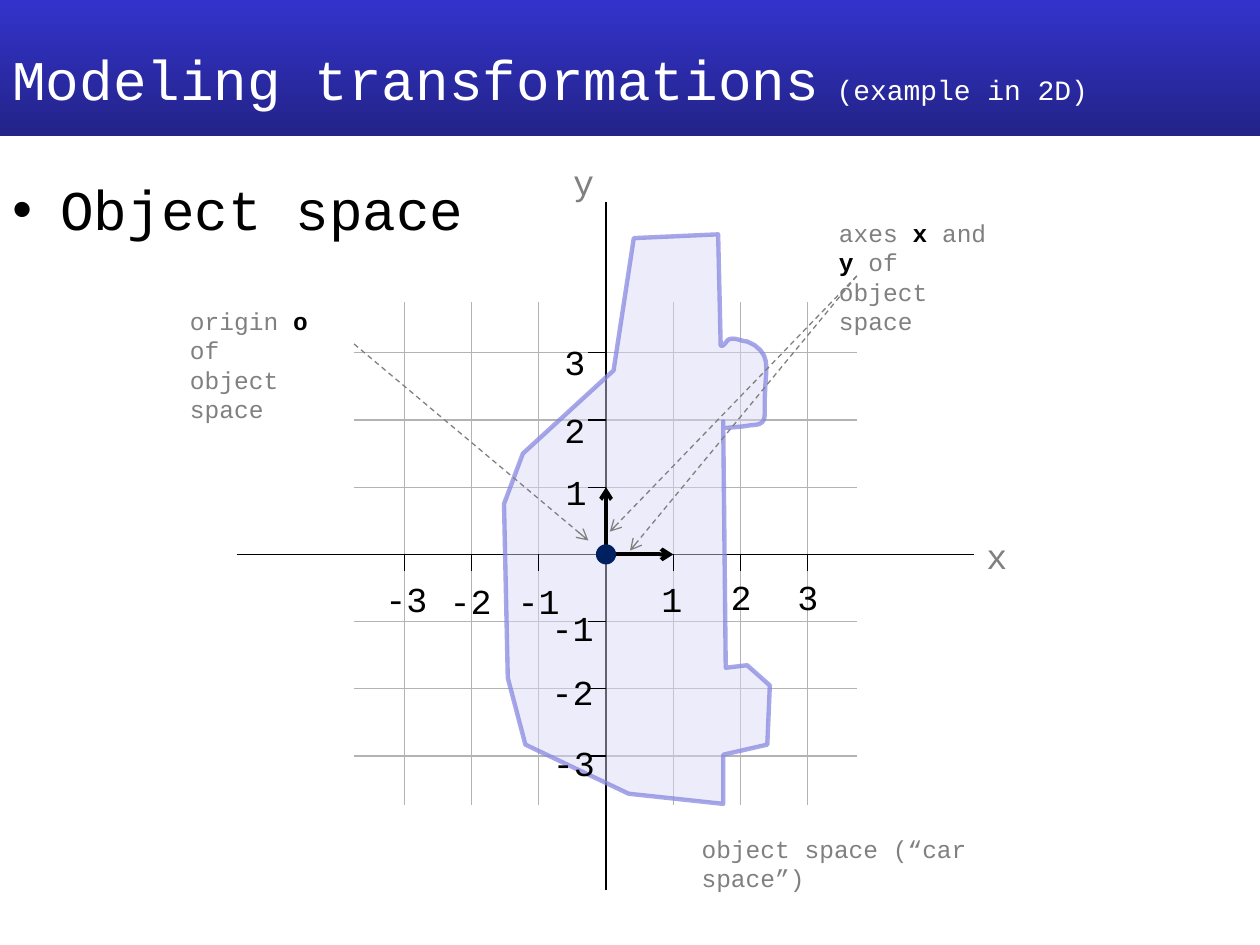
from lxml.etree import SubElement
from pptx import Presentation
from pptx.dml.color import RGBColor
from pptx.enum.dml import MSO_LINE
from pptx.enum.shapes import MSO_CONNECTOR, MSO_SHAPE
from pptx.enum.text import MSO_ANCHOR
from pptx.oxml.ns import qn
from pptx.util import Inches, Pt

COLORS = {
    "white": "FFFFFF", "black": "000000", "gray": "808080", "grid": "B3B3B3",
    "header_top": "3333CC", "header_bottom": "232388",
    "car_fill": "D6D6F5", "car_line": "8585E0", "origin": "002060",
}
ORIGIN_X, ORIGIN_Y = 4.81, 4.4
UNIT = 1.6 / 3
STEPS = (-3, -2, -1, 1, 2, 3)
BREAK = None

X_LABELS = {-3: (2.96, 4.48), -2: (3.47, 4.49), -1: (4.01, 4.49),
            1: (5.15, 4.48), 2: (5.7, 4.46), 3: (6.23, 4.46)}
Y_LABELS = {-3: (4.29, 5.78), -2: (4.28, 5.22), -1: (4.28, 4.71),
            1: (4.39, 3.63), 2: (4.38, 3.14), 3: (4.38, 2.6)}

# A pair is a corner; a triple of pairs is a Bezier curve.
CAR_OUTLINE = [
    (4.99, 6.3), (5.74, 6.38), (5.74, 5.99), (6.09, 5.91), (6.11, 5.44),
    (5.93, 5.28), (5.76, 5.3), (5.74, 3.35),
    ((5.74, 3.33), (5.74, 3.39), (5.74, 3.4)),
    ((5.8, 3.39), (5.87, 3.39), (5.93, 3.38)),
    ((5.97, 3.37), (6.02, 3.38), (6.05, 3.35)),
    ((6.07, 3.33), (6.07, 3.29), (6.07, 3.27)),
    ((6.06, 2.94), (6.14, 2.85), (5.99, 2.74)),
    ((5.97, 2.73), (5.95, 2.72), (5.93, 2.71)),
    ((5.89, 2.71), (5.84, 2.68), (5.8, 2.69)),
    ((5.77, 2.69), (5.76, 2.73), (5.74, 2.74)),
    ((5.73, 2.75), (5.72, 2.74), (5.72, 2.74)),
    (5.7, 1.86), (5.03, 1.89), (4.87, 2.94), (4.15, 3.6), (4, 4),
    (4.03, 5.38), (4.17, 5.91),
]


def rgb(name):
    return RGBColor.from_string(COLORS[name])


def flatten(outline, pieces=8):
    """Return the outline as corners only, with each curve cut into pieces."""
    points = []
    for part in outline:
        if not isinstance(part[0], tuple):
            points.append(part)
            continue
        controls = (points[-1], *part)
        for i in range(1, pieces + 1):
            t = i / pieces
            weights = ((1 - t) ** 3, 3 * t * (1 - t) ** 2, 3 * t * t * (1 - t), t ** 3)
            points.append(tuple(sum(w * c[axis] for w, c in zip(weights, controls))
                                for axis in (0, 1)))
    return points


def write(frame, runs, size=20, color="gray", bullet=False):
    """Fill a frame with runs: a string, BREAK, or a (text, format) pair."""
    frame.word_wrap = True
    paragraph = frame.paragraphs[0]
    if bullet:
        props = paragraph._p.get_or_add_pPr()
        props.set("marL", str(Inches(0.38)))
        props.set("indent", str(-Inches(0.38)))
        SubElement(props, qn("a:buFont")).set("typeface", "Arial")
        SubElement(props, qn("a:buChar")).set("char", "•")
    for part in [runs] if isinstance(runs, str) else runs:
        if part is BREAK:
            paragraph.add_line_break()
            continue
        words, look = (part, {}) if isinstance(part, str) else part
        run = paragraph.add_run()
        run.text = words
        run.font.name = "Courier New"
        run.font.size = Pt(look.get("size", size))
        run.font.bold = look.get("bold", False)
        run.font.color.rgb = rgb(look.get("color", color))


class SpaceSlide:
    """Holds the slide and draws each kind of element on it."""

    def __init__(self, slide):
        self.shapes = slide.shapes

    def header(self, runs):
        band = self.shapes.add_shape(MSO_SHAPE.RECTANGLE, 0, 0, Inches(10), Inches(1.08))
        band.shadow.inherit = False
        band.line.fill.background()
        band.fill.gradient()
        band.fill.gradient_angle = 270
        for stop, name in zip(band.fill.gradient_stops, ("header_top", "header_bottom")):
            stop.color.rgb = rgb(name)
        frame = band.text_frame
        frame.vertical_anchor = MSO_ANCHOR.MIDDLE
        frame.margin_top = Inches(0.21)
        write(frame, runs, size=32, color="white")
        frame.paragraphs[0].alignment = 1

    def text(self, runs, left, top, width, height=0.74, size=20, **look):
        box = self.shapes.add_textbox(*map(Inches, (left, top, width, height)))
        box.text_frame.margin_top = Inches(0.05 + 0.2 * size / 72)
        write(box.text_frame, runs, size=size, **look)

    def line(self, start, end, color="black", width=0.75, dashed=False, arrow=False):
        line = self.shapes.add_connector(MSO_CONNECTOR.STRAIGHT,
                                         *map(Inches, (*start, *end)))
        line.line.color.rgb = rgb(color)
        line.line.width = Pt(width)
        if dashed:
            line.line.dash_style = MSO_LINE.DASH
        props = line._element.spPr
        if arrow:
            SubElement(props.find(qn("a:ln")), qn("a:tailEnd")).set("type", "arrow")
        SubElement(props, qn("a:effectLst"))

    def outline(self, points):
        start, *rest = [tuple(map(Inches, point)) for point in points]
        builder = self.shapes.build_freeform(*start)
        builder.add_line_segments(rest, close=True)
        car = builder.convert_to_shape()
        car.shadow.inherit = False
        car.fill.solid()
        car.fill.fore_color.rgb = rgb("car_fill")
        car.line.color.rgb = rgb("car_line")
        car.line.width = Pt(2.5)
        props = car._element.spPr
        for color, alpha in zip(props.iter(qn("a:srgbClr")), (46, 73)):
            SubElement(color, qn("a:alpha")).set("val", str(alpha * 1000))
        SubElement(props.find(qn("a:ln")), qn("a:round"))

    def dot(self, x, y, size):
        dot = self.shapes.add_shape(
            MSO_SHAPE.OVAL, *map(Inches, (x - size / 2, y - size / 2, size, size)))
        dot.shadow.inherit = False
        dot.fill.solid()
        dot.fill.fore_color.rgb = rgb("origin")
        dot.line.fill.background()


def main():
    deck = Presentation()
    deck.slide_width, deck.slide_height = Inches(10), Inches(7.5)
    page = SpaceSlide(deck.slides.add_slide(deck.slide_layouts[6]))
    origin = (ORIGIN_X, ORIGIN_Y)

    for step in range(-3, 4):
        x, y = ORIGIN_X + step * UNIT, ORIGIN_Y - step * UNIT
        page.line((2.81, y), (6.8, y), color="grid")
        page.line((x, 2.4), (x, 6.39), color="grid")
    page.line((1.88, ORIGIN_Y), (7.73, ORIGIN_Y))
    page.line((ORIGIN_X, 7.06), (ORIGIN_X, 1.6))

    page.header(["Modeling transformations", (" (example in 2D)", {"size": 16})])
    page.text("Object space", 0, 1.25, 10, 6, size=32, color="black", bullet=True)
    page.outline(flatten(CAR_OUTLINE))

    for tip in ((ORIGIN_X + UNIT, ORIGIN_Y), (ORIGIN_X, ORIGIN_Y - UNIT)):
        page.line(origin, tip, width=2.25, arrow=True)

    for step in STEPS:
        x, y = ORIGIN_X + step * UNIT, ORIGIN_Y - step * UNIT
        page.line((x, ORIGIN_Y), (x, ORIGIN_Y + 0.13))
        page.line((ORIGIN_X, y), (ORIGIN_X - 0.14, y))
        for labels in (X_LABELS, Y_LABELS):
            page.text(str(step), *labels[step], 0.77 if step < 0 else 0.61, color="black")
    page.text("x", 7.73, 4.14, 0.58)
    page.text("y", 4.45, 1.17, 0.58)

    strong = {"color": "black", "bold": True}
    page.text("object space (“car space”)", 5.47, 6.53, 2.47, 0.34, size=14)
    page.text(["origin ", ("o", strong), " of", BREAK, "object space"],
              1.41, 2.34, 1.3, 0.57, size=14)
    page.text(["axes ", ("x", strong), " and ", ("y", strong), " of", BREAK, "object space"],
              6.56, 1.64, 1.52, 0.57, size=14)
    for start, end in (((2.81, 2.73), (4.67, 4.29)),
                       ((6.8, 2.19), (5, 4.37)),
                       ((6.8, 2.19), (4.84, 4.22))):
        page.line(start, end, color="gray", dashed=True, arrow=True)
    page.dot(*origin, 0.16)

    deck.save("out.pptx")


if __name__ == "__main__":
    main()
